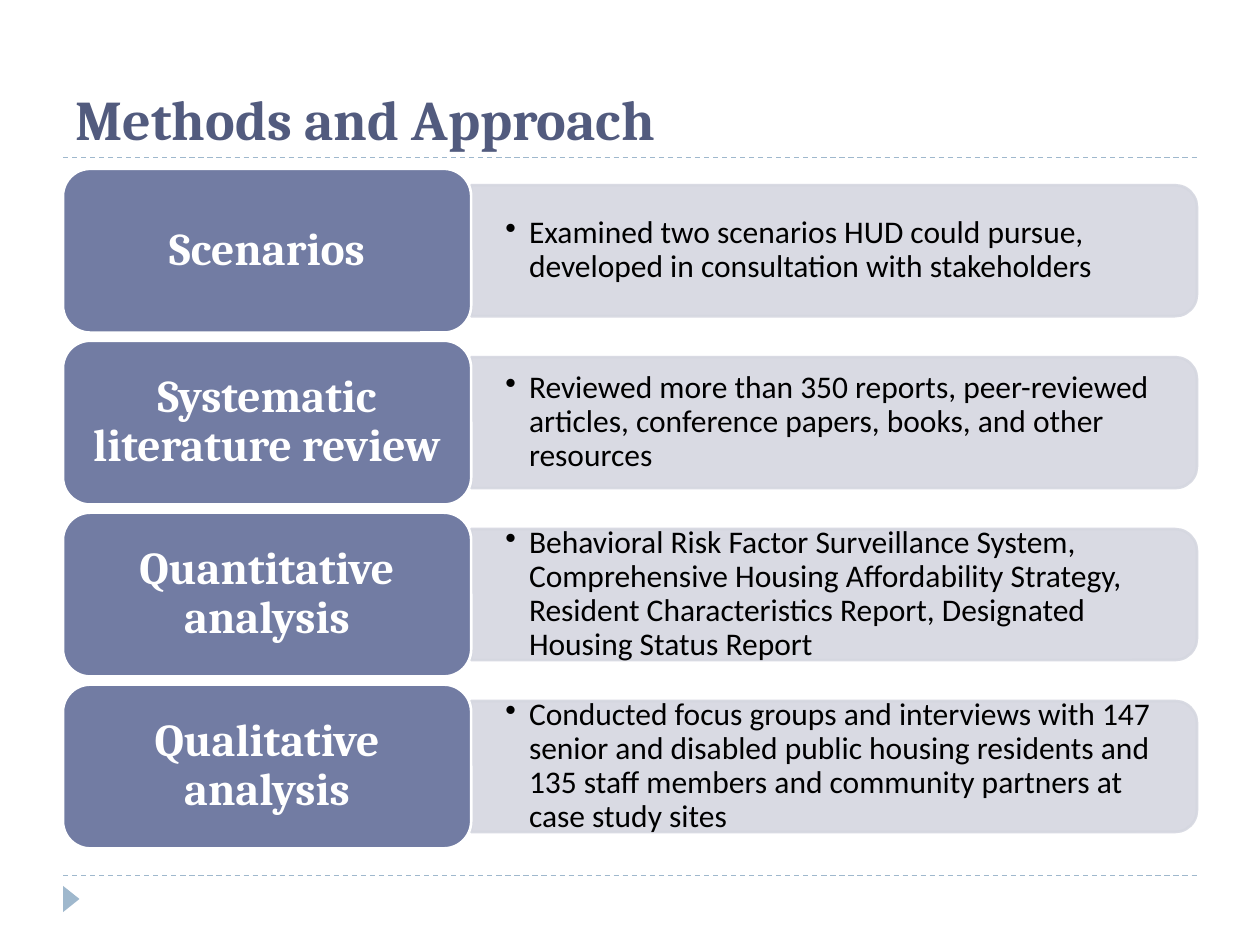
from lxml import etree
from pptx import Presentation
from pptx.dml.color import RGBColor
from pptx.enum import dml, shapes, text
from pptx.oxml import ns
from pptx.util import Pt

TITLE = "Methods and Approach"
METHODS = [
    ("Scenarios",
     "Examined two scenarios HUD could pursue, developed in consultation with stakeholders"),
    ("Systematic literature review",
     "Reviewed more than 350 reports, peer-reviewed articles, conference papers, books, "
     "and other resources"),
    ("Quantitative analysis",
     "Behavioral Risk Factor Surveillance System, Comprehensive Housing Affordability Strategy, "
     "Resident Characteristics Report, Designated Housing Status Report"),
    ("Qualitative analysis",
     "Conducted focus groups and interviews with 147 senior and disabled public housing residents "
     "and 135 staff members and community partners at case study sites"),
]

LEFT, RIGHT = 36, 684
RULES = (90, 500.4)
CARD_TOP, CARD_WIDTH, CARD_HEIGHT, CARD_STEP = 96.5, 233.3, 93.6, 98.25
BAR_HEIGHT, DETAIL_WIDTH, DETAIL_HEIGHT = 74.9, 411, 67.7
HEADING_FONT, BODY_FONT = "Cambria", "Calibri"
ACCENT, CARD, BAR, WHITE = "9FB8CD", "727CA3", "D5D7E0", "FFFFFF"


def color(value):
    return RGBColor.from_string(value)


def add_shape(slide, kind, left, top, width, height, fill, line=None, rotation=0):
    shape = slide.shapes.add_shape(kind, Pt(left), Pt(top), Pt(width), Pt(height))
    shape.shadow.inherit = False
    shape.rotation = rotation
    shape.fill.solid()
    shape.fill.fore_color.rgb = color(fill)
    if line:
        shape.line.color.rgb = color(line)
        shape.line.width = Pt(1.5)
    else:
        shape.line.fill.background()
    return shape


def add_textbox(slide, left, top, width, height):
    return slide.shapes.add_textbox(Pt(left), Pt(top), Pt(width), Pt(height))


def write(shape, content, font, size, ink, bold=False, align=text.PP_ALIGN.LEFT,
          anchor=text.MSO_ANCHOR.MIDDLE, insets=(7.2, 3.6), spacing=0.9, bullet=False):
    frame = shape.text_frame
    frame.word_wrap = True
    frame.vertical_anchor = anchor
    frame.margin_left = frame.margin_right = Pt(insets[0])
    frame.margin_top = frame.margin_bottom = Pt(insets[1])
    paragraph = frame.paragraphs[0]
    paragraph.alignment = align
    paragraph.line_spacing = spacing
    run = paragraph.add_run()
    run.text = content
    run.font.name = font
    run.font.size = Pt(size)
    run.font.bold = bold
    run.font.color.rgb = color(ink)
    if bullet:
        properties = paragraph._p.get_or_add_pPr()
        properties.set("marL", str(Pt(13.5)))
        properties.set("indent", str(Pt(-13.5)))
        etree.SubElement(properties, ns.qn("a:buChar")).set("char", "•")


def add_rule(slide, y):
    rule = slide.shapes.add_connector(
        shapes.MSO_CONNECTOR.STRAIGHT, Pt(LEFT), Pt(y), Pt(RIGHT), Pt(y))
    rule.line.color.rgb = color(ACCENT)
    rule.line.width = Pt(0.75)
    rule.line.dash_style = dml.MSO_LINE.DASH
    etree.SubElement(rule._element.spPr, ns.qn("a:effectLst"))


def add_bar(slide, left, middle):
    length = RIGHT - left
    bar = add_shape(slide, shapes.MSO_SHAPE.ROUND_2_SAME_RECTANGLE,
                    (left + RIGHT - BAR_HEIGHT) / 2, middle - length / 2,
                    BAR_HEIGHT, length, BAR, BAR, 90)
    for tint in bar._element.spPr.iter(ns.qn("a:srgbClr")):
        etree.SubElement(tint, ns.qn("a:alpha")).set("val", "90000")


def add_method(slide, index, heading, detail):
    top = CARD_TOP + index * CARD_STEP
    middle = top + CARD_HEIGHT / 2
    bar_left = LEFT + CARD_WIDTH
    add_bar(slide, bar_left, middle)
    box = add_textbox(slide, bar_left, middle - DETAIL_HEIGHT / 2, DETAIL_WIDTH, DETAIL_HEIGHT)
    write(box, detail, BODY_FONT, 18, "000000", insets=(19.5, 9.75), bullet=True)
    card = add_shape(slide, shapes.MSO_SHAPE.ROUNDED_RECTANGLE,
                     LEFT, top, CARD_WIDTH, CARD_HEIGHT, CARD, WHITE)
    write(card, heading, HEADING_FONT, 26, WHITE, bold=True,
          align=text.PP_ALIGN.CENTER, insets=(7.8, 3.9))


def main():
    presentation = Presentation()
    presentation.slide_width, presentation.slide_height = Pt(720), Pt(540)
    slide = presentation.slides.add_slide(presentation.slide_layouts[6])
    for y in RULES:
        add_rule(slide, y)
    add_shape(slide, shapes.MSO_SHAPE.ISOSCELES_TRIANGLE, 33.2, 509, 15, 9.4, ACCENT, rotation=90)
    title = add_textbox(slide, LEFT, 12.2, RIGHT - LEFT, 77.8)
    write(title, TITLE, HEADING_FONT, 32, "525B7E", bold=True,
          anchor=text.MSO_ANCHOR.BOTTOM, spacing=1.0)
    for index, (heading, detail) in enumerate(METHODS):
        add_method(slide, index, heading, detail)
    presentation.save("out.pptx")


if __name__ == "__main__":
    main()
